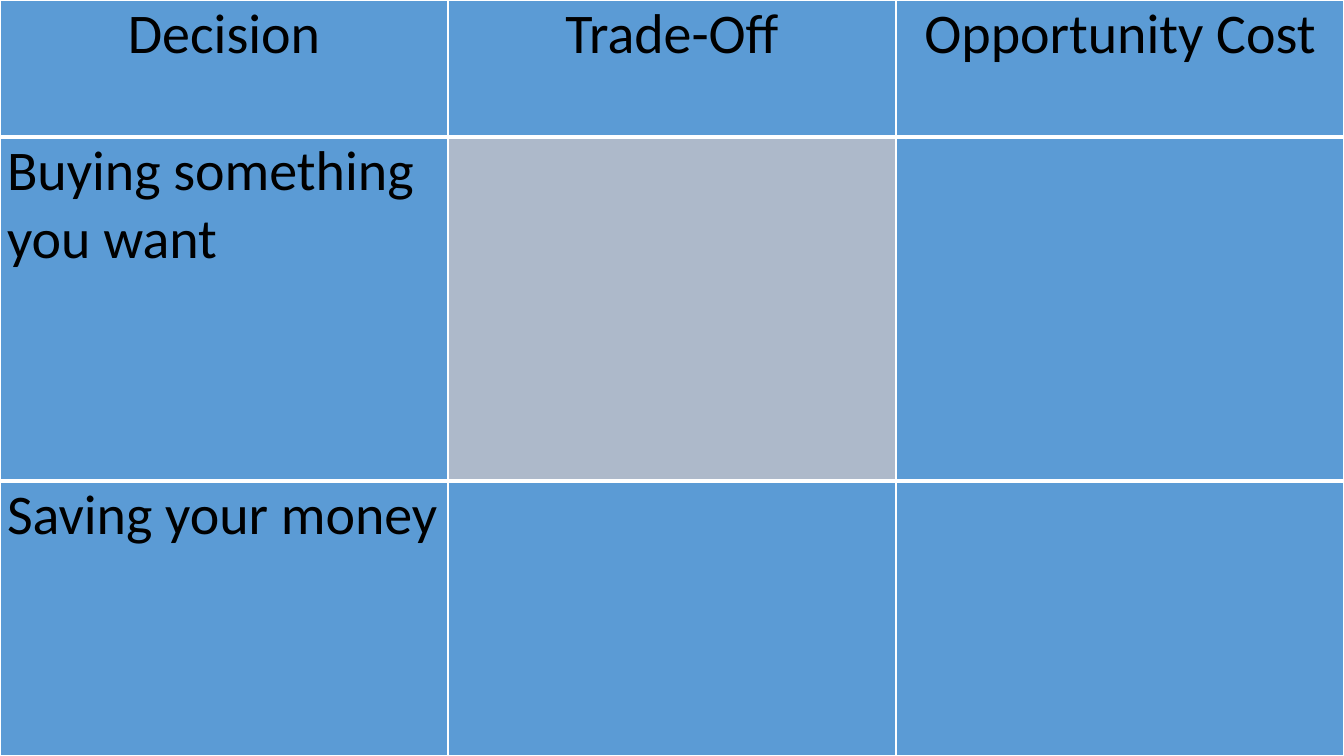
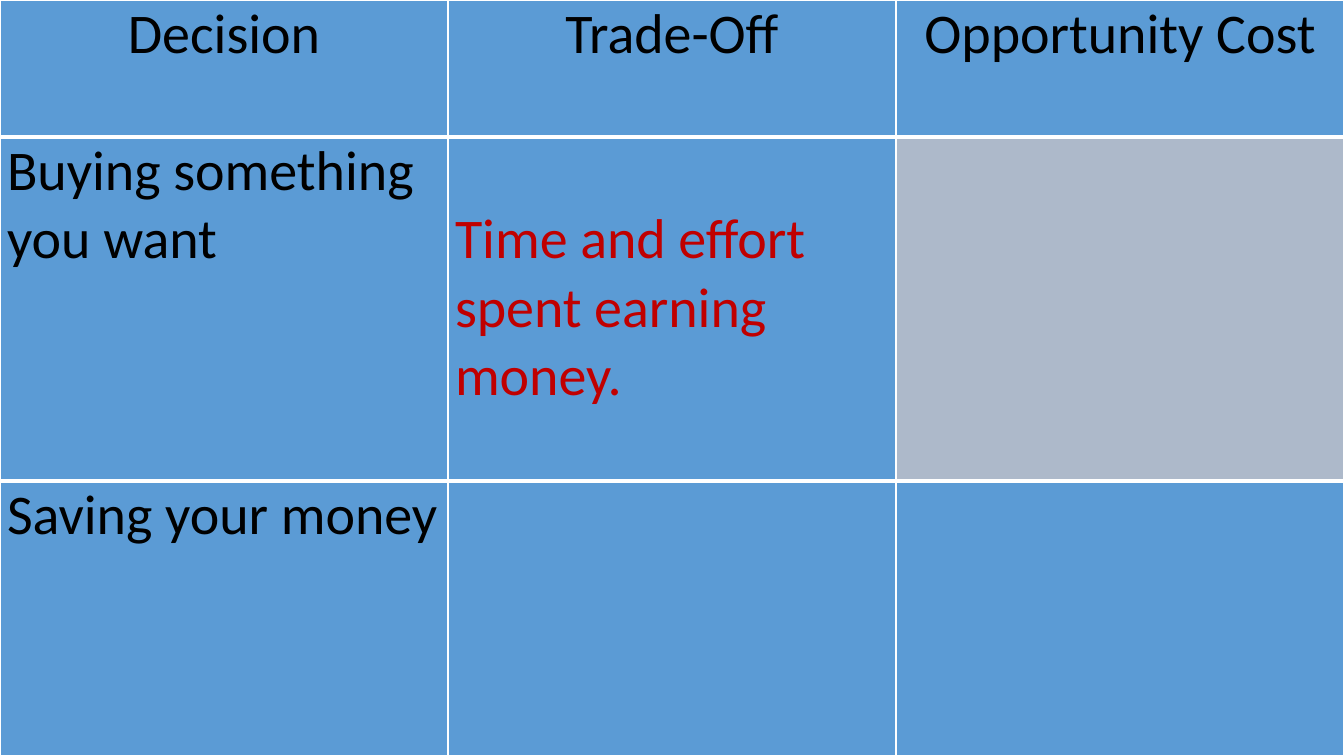
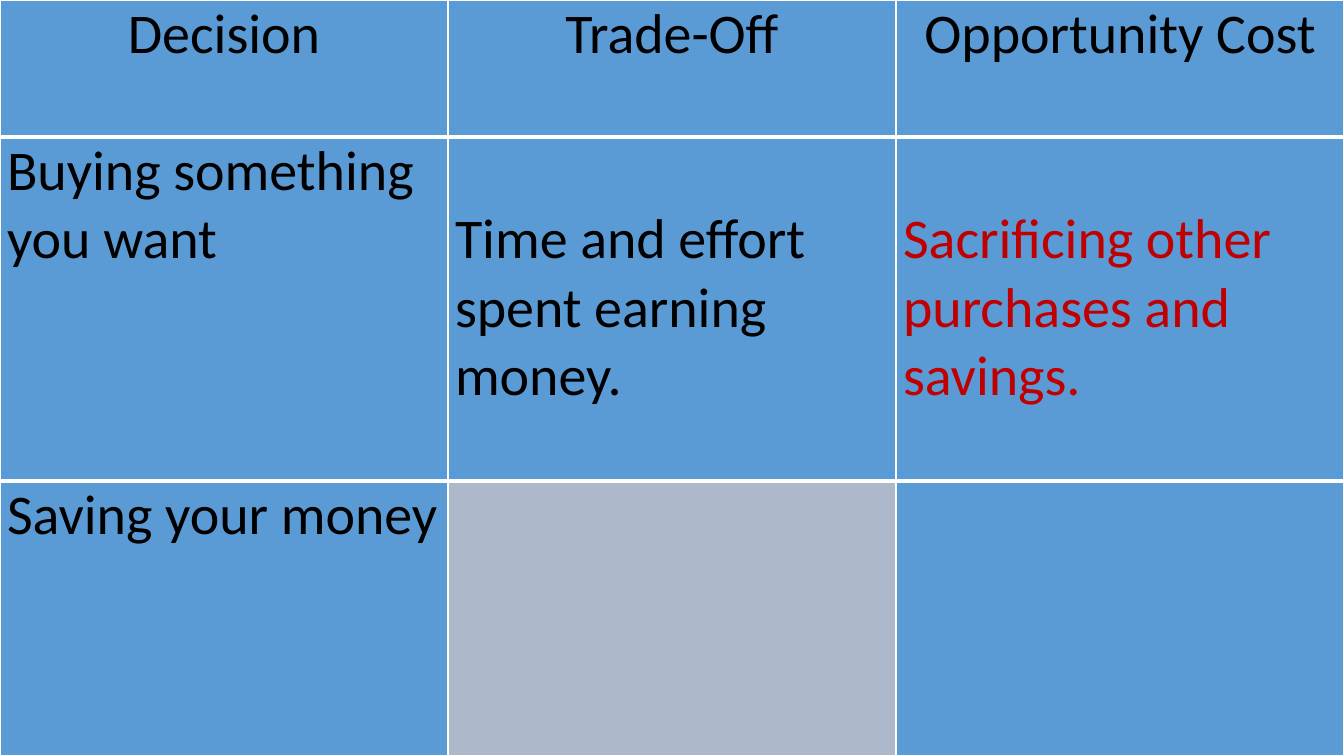
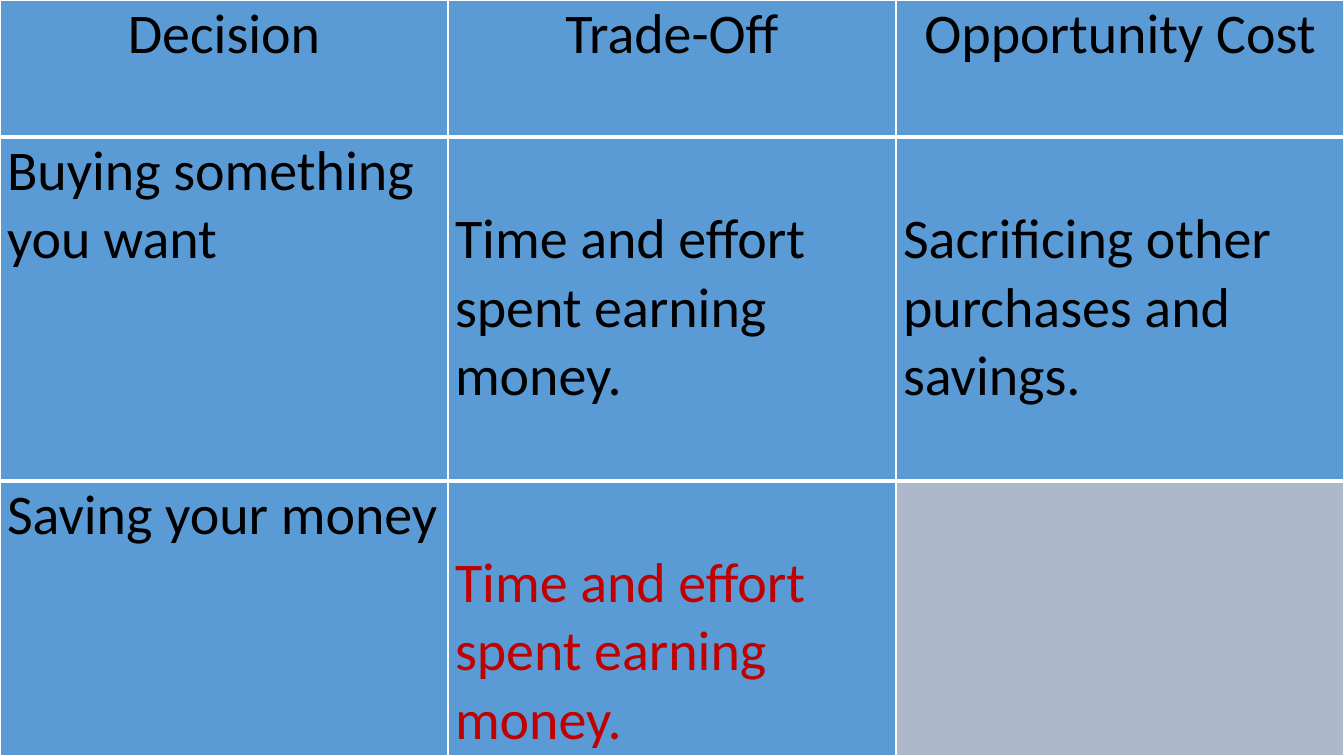
"""Four slides that fill in a decision, trade-off and opportunity cost table step by step."""
from lxml.etree import SubElement
from pptx import Presentation
from pptx.dml.color import RGBColor
from pptx.enum.text import PP_ALIGN
from pptx.oxml.ns import qn
from pptx.util import Inches, Pt

COLOURS = {"cell": "5B9BD5", "next": "ADB9CA", "border": "FFFFFF", "text": "000000", "new": "C00000"}
WIDTH, HEIGHT = 13.33, 7.5
ROW_HEIGHTS = [1.36, 3.41, 2.73]
ANSWER_DROP = 0.68

TABLE_FORMAT = {"first_row": False, "horz_banding": False}
CELL_FORMAT = {"margin_left": Inches(0.07), "margin_right": Inches(0.07), "margin_top": 0, "margin_bottom": 0}
FONT_FORMAT = {"name": "Calibri", "size": Pt(40), "bold": False}
BORDER_WIDTHS = [
    {"lnL": 1, "lnR": 1, "lnT": 1, "lnB": 3},
    {"lnL": 1, "lnR": 1, "lnT": 1, "lnB": 1},
    {"lnL": 1, "lnR": 1, "lnT": 3, "lnB": 1},
]

LABELS = {
    (0, 0): "Decision",
    (0, 1): "Trade-Off",
    (0, 2): "Opportunity Cost",
    (1, 0): "Buying something you want",
    (2, 0): "Saving your money",
}
ANSWERS = {
    (1, 1): "Time and effort spent earning money.",
    (1, 2): "Sacrificing other purchases and savings.",
    (2, 1): "Time and effort spent earning money.",
}
ANSWER_ORDER = [(1, 1), (1, 2), (2, 1), (2, 2)]


def apply_format(target, values):
    for name, value in values.items():
        setattr(target, name, value)


def add_borders(cell, widths):
    properties = cell._tc.get_or_add_tcPr()
    for side, points in widths.items():
        line = SubElement(properties, qn(f"a:{side}"), w=str(Pt(points)))
        fill = SubElement(line, qn("a:solidFill"))
        SubElement(fill, qn("a:srgbClr"), val=COLOURS["border"])


deck = Presentation()
apply_format(deck, {"slide_width": Inches(WIDTH), "slide_height": Inches(HEIGHT)})

for step, next_place in enumerate(ANSWER_ORDER):
    page = deck.slides.add_slide(deck.slide_layouts[6])
    table = page.shapes.add_table(3, 3, 0, 0, Inches(WIDTH), Inches(HEIGHT)).table
    apply_format(table, TABLE_FORMAT)
    for column in table.columns:
        column.width = Inches(WIDTH / 3)

    shown = ANSWER_ORDER[:step]
    texts = LABELS | {place: ANSWERS[place] for place in shown}
    for row_index, height in enumerate(ROW_HEIGHTS):
        table.rows[row_index].height = Inches(height)
        for column_index in range(3):
            place = (row_index, column_index)
            cell = table.cell(*place)
            apply_format(cell, CELL_FORMAT)
            add_borders(cell, BORDER_WIDTHS[row_index])
            cell.fill.solid()
            cell.fill.fore_color.rgb = RGBColor.from_string(COLOURS["next" if place == next_place else "cell"])
            if place not in texts:
                continue
            if place in shown:
                cell.margin_top = Inches(ANSWER_DROP)
            para = cell.text_frame.paragraphs[0]
            para.alignment = PP_ALIGN.CENTER if row_index == 0 else PP_ALIGN.LEFT
            span = para.add_run()
            span.text = texts[place]
            apply_format(span.font, FONT_FORMAT)
            is_new = place in shown[-1:]
            span.font.color.rgb = RGBColor.from_string(COLOURS["new" if is_new else "text"])

deck.save("out.pptx")
